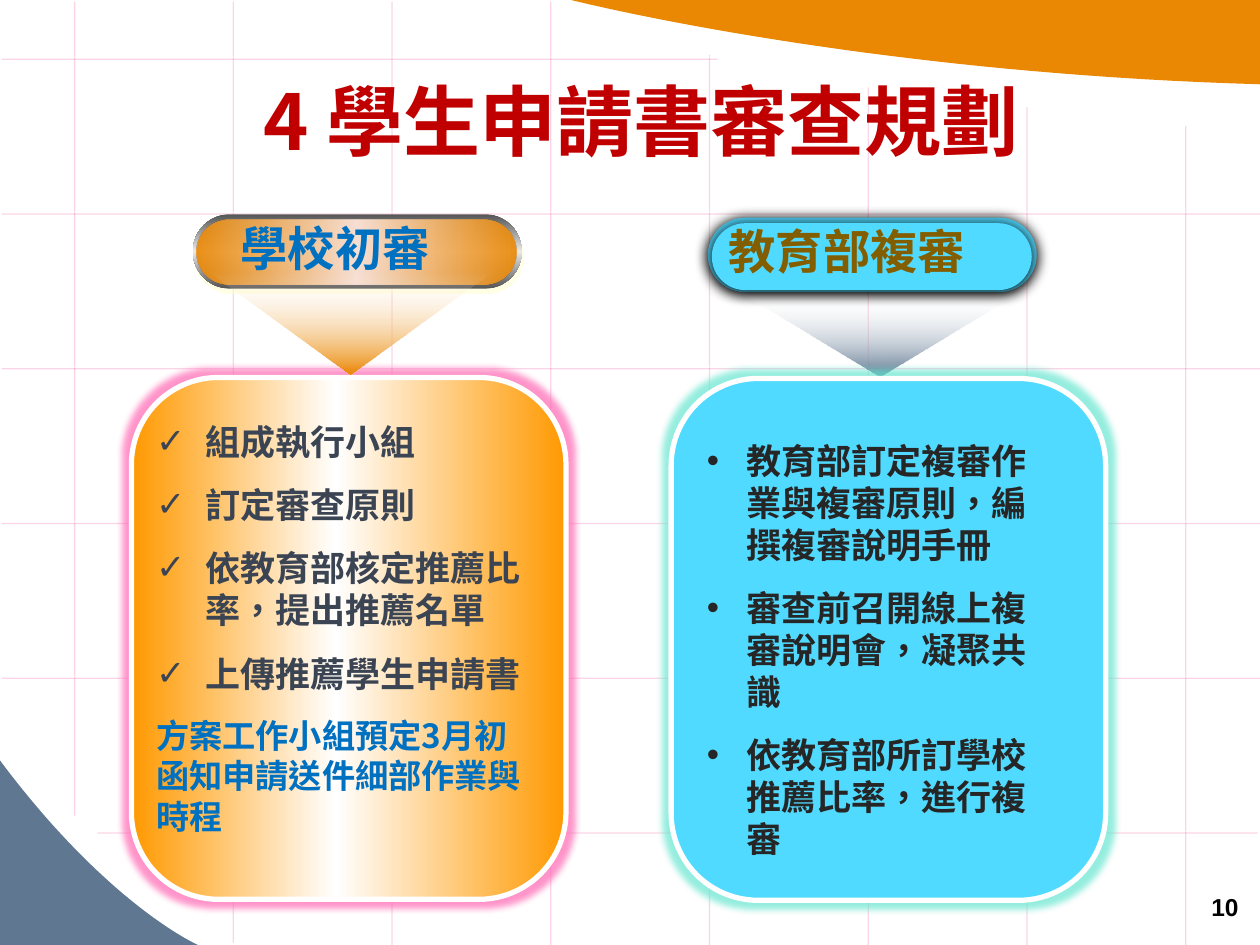
from lxml import etree
from pptx import Presentation
from pptx import util as u
from pptx.dml import color
from pptx.enum import shapes, text
from pptx.oxml import ns

COLORS = {
    "white": "FFFFFF", "orange": "EB8803", "slate": "5F7791", "pink": "EA157A",
    "amber": "FF9900", "cyan": "51DAFF", "steel": "545454", "silver": "EAEAEA",
    "peach": "F8E0D5", "cream": "FFFFCC", "black": "000000", "red": "C00000",
    "blue": "0070C0", "brown": "835E01", "ink": "3B4453", "charcoal": "262626",
    "pink glow": "FF66B3", "teal glow": "66E6D0",
}
CJK = "Noto Sans CJK SC"
SHAPE = shapes.MSO_SHAPE
ALIGN = text.PP_ALIGN


def paint(shape, stops, angle=0):
    """Fill with one (colour, alpha) stop, or a gradient of (position, colour, alpha)."""
    shape.fill.background()
    blank = shape._element.spPr.find(ns.qn("a:noFill"))
    kind = "a:gradFill" if len(stops) > 1 else "a:solidFill"
    fill = etree.Element(ns.qn(kind))
    blank.getparent().replace(blank, fill)
    parent = fill
    if len(stops) > 1:
        fill.set("rotWithShape", "1")
        stop_list = etree.SubElement(fill, ns.qn("a:gsLst"))
    for position, name, alpha in stops:
        if len(stops) > 1:
            parent = etree.SubElement(stop_list, ns.qn("a:gs"), pos=str(position * 1000))
        tone = etree.SubElement(parent, ns.qn("a:srgbClr"), val=COLORS[name])
        if alpha < 100:
            etree.SubElement(tone, ns.qn("a:alpha"), val=str(alpha * 1000))
    if len(stops) > 1:
        etree.SubElement(fill, ns.qn("a:lin"), ang=str(angle * 60000), scaled="0")


def add_effect(shape, kind, name, alpha, **settings):
    """Give a shape or connector a single glow or shadow."""
    properties = shape._element.spPr
    effects = properties.find(ns.qn("a:effectLst"))
    if effects is None:
        effects = etree.SubElement(properties, ns.qn("a:effectLst"))
    effect = etree.SubElement(effects, ns.qn(kind),
                              {key: str(value) for key, value in settings.items()})
    tone = etree.SubElement(effect, ns.qn("a:srgbClr"), val=COLORS[name])
    etree.SubElement(tone, ns.qn("a:alpha"), val=str(alpha * 1000))


deck = Presentation()
deck.slide_width, deck.slide_height = u.Cm(25.4), u.Cm(19.05)
page = deck.slides.add_slide(deck.slide_layouts[6])

# Curved corners: a Bezier edge closed through the page corner
corners = [
    ("slate", [(3.99, 19.05), (3.99, 19.05), (2.18, 18.26), (-0.03, 15.29)], (-0.03, 19.05)),
    ("orange", [(11.51, 0), (11.51, 0), (17.27, 1.47), (25.4, 1.7)], (25.4, 0)),
]
for name, curve, corner in corners:
    points = []
    for step in range(41):
        t = step / 40
        weights = ((1 - t) ** 3, 3 * t * (1 - t) ** 2, 3 * t * t * (1 - t), t ** 3)
        points.append([u.Cm(sum(w * p[axis] for w, p in zip(weights, curve)))
                       for axis in (0, 1)])
    points.append([u.Cm(value) for value in corner])
    builder = page.shapes.build_freeform(*points[0])
    builder.add_line_segments(points[1:], close=True)
    shape = builder.convert_to_shape()
    shape.shadow.inherit = False
    shape.line.fill.background()
    paint(shape, [(0, name, 100)])

# Background grid
GRID_X, GRID_Y, STEP_X, STEP_Y = 1.47, 1.16, 3.2, 3.12
column_spans = [(0, 16.41), (0, 18.97), (0, 19.05), (0, 19.1),
                (1.07, 19.1), (1.73, 19.1), (2.13, 19.1), (2.51, 19.1)]
row_spans = [(14.43, 0)] + [(25.43, 0)] * 4 + [(25.32, 1.93)]
grid = [(GRID_X + STEP_X * i, top, GRID_X + STEP_X * i, bottom)
        for i, (top, bottom) in enumerate(column_spans)]
grid += [(start, GRID_Y + STEP_Y * i, end, GRID_Y + STEP_Y * i)
         for i, (start, end) in enumerate(row_spans)]
for ends in grid:
    line = page.shapes.add_connector(shapes.MSO_CONNECTOR.STRAIGHT, *map(u.Cm, ends))
    line.line.width = u.Pt(0.75)
    line.line.color.rgb = color.RGBColor.from_string(COLORS["white"])
    tone = line.line._ln.find(".//" + ns.qn("a:srgbClr"))
    etree.SubElement(tone, ns.qn("a:alpha"), val="50000")
    add_effect(line, "a:outerShdw", "pink", 35, dist=u.Pt(1.4), dir=45 * 60000)

# Pale tiles in the grid: column, row, opacity
for column, row, alpha in [(3, 2, 25), (6, 4, 30), (0, 3, 20), (5, 5, 20),
                           (2, -1, 40), (2, 4, 30), (5, 1, 30)]:
    top = GRID_Y + STEP_Y * row + 0.08
    bottom = min(19.05, top + 3)
    top = max(0, top)
    tile = page.shapes.add_shape(SHAPE.RECTANGLE, u.Cm(GRID_X + STEP_X * column + 0.06),
                                 u.Cm(top), u.Cm(3.1), u.Cm(bottom - top))
    tile.shadow.inherit = False
    tile.line.fill.background()
    paint(tile, [(0, "white", alpha)])

# Cards, header pills and pointers: kind, place, corner, stops, angle, effect
amber_band = [(0, "amber", 100), (47, "white", 100), (100, "amber", 100)]
steel_band = [(0, "steel", 100), (50, "silver", 100), (100, "steel", 100)]
orange_band = [(0, "orange", 90), (50, "peach", 100), (100, "orange", 90)]
cyan = [(0, "cyan", 100)]
pink_glow = ("a:glow", "pink glow", 70, {"rad": u.Pt(8)})
teal_glow = ("a:glow", "teal glow", 70, {"rad": u.Pt(8)})
cream_shadow = ("a:outerShdw", "cream", 50, {"dist": u.Pt(3.2), "dir": 72 * 60000})
dark_shadow = ("a:outerShdw", "black", 100,
               {"blurRad": u.Pt(8.5), "dist": u.Pt(1), "dir": 90 * 60000})
panels = [
    ("card", (2.65, 7.61, 8.76, 10.52), 0.2, amber_band, 0, pink_glow),
    ("pill", (3.89, 4.32, 6.63, 1.5), 0.5, steel_band, 90, cream_shadow),
    ("pill", (3.96, 4.42, 6.45, 1.32), 0.5, orange_band, 0, None),
    ("pill", (14.27, 4.39, 6.63, 1.5), 0.5, cyan, 0, dark_shadow),
    ("pill", (14.35, 4.5, 6.45, 1.35), 0.5, cyan, 0, dark_shadow),
    ("pointer", (4.22, 5.49, 5.69, 2.06), 0.5,
     [(0, "orange", 100), (100, "white", 0)], 90, None),
    ("pointer", (14.99, 5.94, 5.51, 1.65), 0.5,
     [(0, "slate", 100), (100, "white", 0)], 90, None),
    ("card", (13.53, 7.63, 8.76, 10.52), 0.2, cyan, 0, teal_glow),
]
for kind, place, corner, stops, angle, effect in panels:
    preset = SHAPE.ISOSCELES_TRIANGLE if kind == "pointer" else SHAPE.ROUNDED_RECTANGLE
    panel = page.shapes.add_shape(preset, *map(u.Cm, place))
    panel.adjustments[0] = corner
    panel.shadow.inherit = False
    paint(panel, stops, angle)
    if kind == "card":
        panel.line.color.rgb = color.RGBColor.from_string(COLORS["white"])
        panel.line.width = u.Pt(3)
    else:
        panel.line.fill.background()
    if kind == "pointer":
        panel._element.spPr.xfrm.set("flipV", "1")
    if effect:
        add_effect(panel, *effect[:3], **effect[3])

# Text: place, alignment, font, bullet indent, paragraphs (text, size, colour, bullet)
texts = [
    ((19.3, 17.86, 5.92, 1.09), ALIGN.RIGHT, "Arial", 0, [("10", 14, "black", "")]),
    ((1.5, 1.12, 22.86, 2.57), ALIGN.CENTER, CJK, 0,
     [("4 學生申請書審查規劃", 44, "red", "")]),
    ((4.09, 4.32, 5.33, 1.42), ALIGN.CENTER, CJK, 0, [("學校初審", 27, "blue", "")]),
    ((13.45, 4.37, 7.24, 1.42), ALIGN.CENTER, CJK, 0, [("教育部複審", 27, "brown", "")]),
    ((2.9, 8.36, 8.2, 8.69), ALIGN.LEFT, CJK, 0.99, [
        ("組成執行小組", 20, "ink", "✓"),
        ("訂定審查原則", 20, "ink", "✓"),
        ("依教育部核定推薦比率，提出推薦名單", 20, "ink", "✓"),
        ("上傳推薦學生申請書", 20, "ink", "✓"),
        ("方案工作小組預定3月初函知申請送件細部作業與時程", 19, "blue", "")]),
    ((14, 8.74, 7.62, 8.81), ALIGN.LEFT, CJK, 0.79, [
        ("教育部訂定複審作業與複審原則，編撰複審說明手冊", 20, "charcoal", "•"),
        ("審查前召開線上複審說明會，凝聚共識", 20, "charcoal", "•"),
        ("依教育部所訂學校推薦比率，進行複審", 20, "charcoal", "•")]),
]
for place, align, font, indent, lines in texts:
    box = page.shapes.add_textbox(*map(u.Cm, place))
    frame = box.text_frame
    frame.word_wrap = True
    if lines[0][1] == 44:
        frame.vertical_anchor = text.MSO_ANCHOR.MIDDLE
    for index, (words, size, name, bullet) in enumerate(lines):
        para = frame.add_paragraph() if index else frame.paragraphs[0]
        para.text = words
        para.alignment = align
        para.line_spacing = u.Pt(round(size * 1.2))
        if len(lines) > 1:
            para.space_after = u.Pt(6)
            if index:
                para.space_before = u.Pt(6)
        if bullet:
            properties = para._p.get_or_add_pPr()
            properties.set("marL", str(u.Cm(indent)))
            properties.set("indent", str(-u.Cm(indent)))
            etree.SubElement(properties, ns.qn("a:buFont"), typeface="Arial")
            etree.SubElement(properties, ns.qn("a:buChar"), char=bullet)
        span = para.runs[0]
        span.font.size = u.Pt(size)
        span.font.bold = True
        span.font.color.rgb = color.RGBColor.from_string(COLORS[name])
        span.font.name = font
        span_properties = span._r.get_or_add_rPr()
        span_properties.set("lang", "zh-TW")
        etree.SubElement(span_properties, ns.qn("a:ea"), typeface=font)

deck.save("out.pptx")
